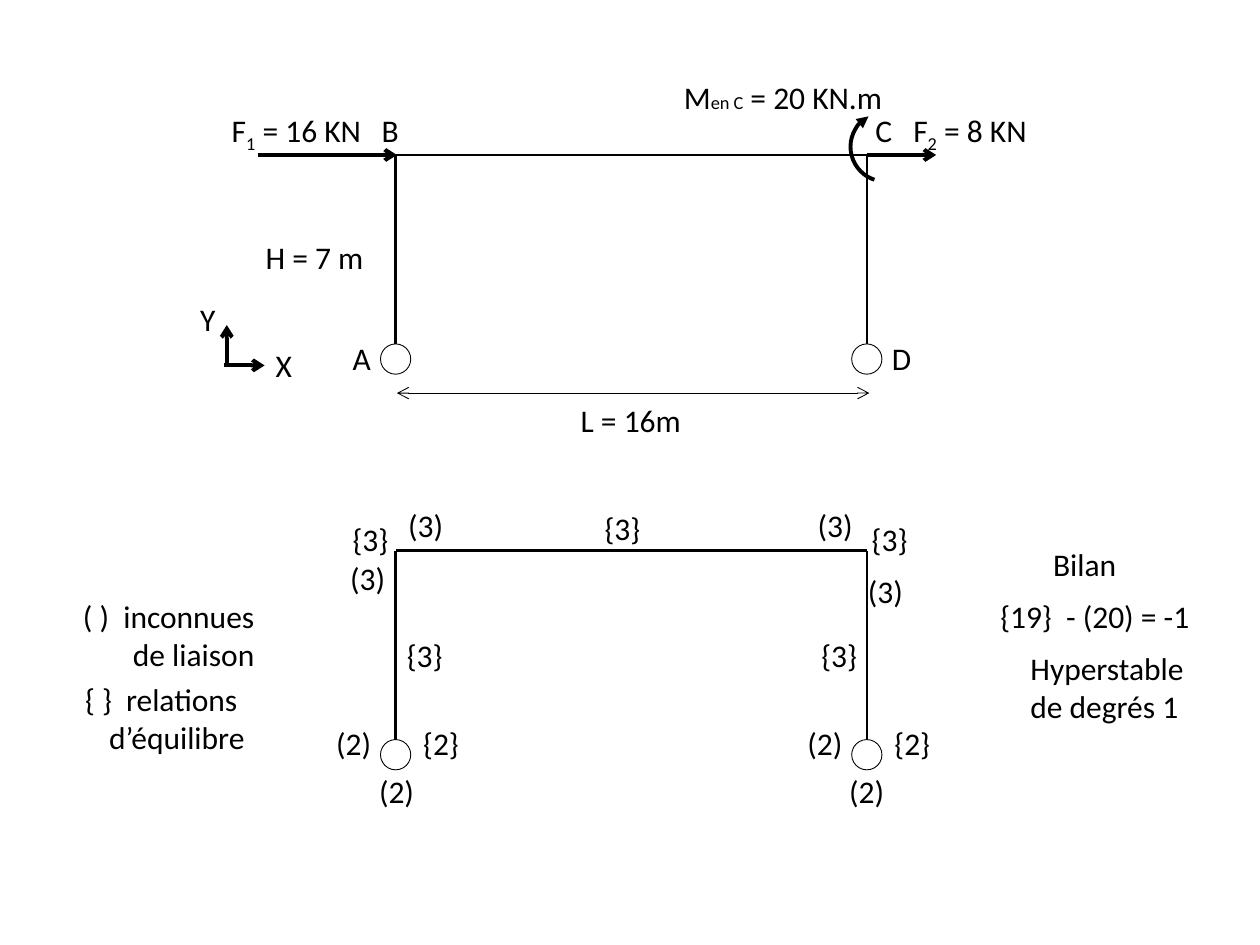
from dataclasses import dataclass
from typing import Any, Optional

import pptx
import pptx.dml.color
import pptx.enum.shapes
import pptx.enum.text
import pptx.oxml
import pptx.oxml.ns
import pptx.util

COLUMNS, ROWS = 100, 75
CELL = pptx.util.Inches(0.1)
COLORS = {"ink": "000000"}
FONT = "Calibri"
TEXT_SIZE = 18
THIN, FRAME, FORCE = 0.5, 1.5, 2.25

# Portal frame, in columns and rows
LEFT_POST, RIGHT_POST = 31.4, 68.8
POST_HEIGHT = 15
HINGE = 2.4
LOADED_BEAM, COUNTED_BEAM = 12.3, 43.7

ALIGN = pptx.enum.text.PP_ALIGN


@dataclass
class Run:
    text: str
    size: float = TEXT_SIZE
    subscript: bool = False


@dataclass
class Line:
    runs: list[Run]
    align: Optional[ALIGN] = None


@dataclass
class Label:
    left: float
    top: float
    width: float
    lines: list[Line]
    wrap: bool = False


@dataclass
class Segment:
    start: tuple[float, float]
    end: tuple[float, float]
    weight: float
    head: Optional[str] = None
    tail: Optional[str] = None


def plain(left: float, top: float, width: float, *texts: str,
          aligns: tuple = (), wrap: bool = False) -> Label:
    """Label whose lines each have a single run."""
    aligns = aligns or (None,) * len(texts)
    lines = [Line([Run(text)], align) for text, align in zip(texts, aligns)]
    return Label(left, top, width, lines, wrap)


def grid(cells: float) -> int:
    return round(cells * CELL)


def style_line(shape: Any, weight: float, head: Optional[str] = None,
               tail: Optional[str] = None) -> None:
    shape.line.color.rgb = pptx.dml.color.RGBColor.from_string(COLORS["ink"])
    shape.line.width = pptx.util.Pt(weight)
    outline = shape.line._get_or_add_ln()
    for tag, arrow in (("a:headEnd", head), ("a:tailEnd", tail)):
        if arrow:
            end = pptx.oxml.ns.qn(tag)
            outline.append(outline.makeelement(end, {"type": arrow}))


def draw_segment(shapes: Any, segment: Segment) -> None:
    connector = shapes.add_connector(
        pptx.enum.shapes.MSO_CONNECTOR.STRAIGHT,
        *map(grid, segment.start + segment.end))
    style_line(connector, segment.weight, segment.head, segment.tail)
    properties = connector._element.spPr
    properties.append(properties.makeelement(pptx.oxml.ns.qn("a:effectLst"), {}))


def draw_outline(shapes: Any, kind: Any, left: float, top: float, size: float,
                 weight: float, head: Optional[str] = None) -> Any:
    shape = shapes.add_shape(kind, *map(grid, (left, top, size, size)))
    shape.shadow.inherit = False
    shape.fill.background()
    style_line(shape, weight, head)
    return shape


def draw_label(shapes: Any, label: Label) -> None:
    height = 4 if len(label.lines) == 1 else 7.1
    box = shapes.add_textbox(*map(grid, (label.left, label.top, label.width, height)))
    frame = box.text_frame
    frame.word_wrap = label.wrap
    frame.auto_size = pptx.enum.text.MSO_AUTO_SIZE.SHAPE_TO_FIT_TEXT
    for index, line in enumerate(label.lines):
        paragraph = frame.add_paragraph() if index else frame.paragraphs[0]
        paragraph.alignment = line.align
        for part in line.runs:
            run = paragraph.add_run()
            run.text = part.text
            run.font.name = FONT
            run.font.size = pptx.util.Pt(part.size)
            run.font.color.rgb = pptx.dml.color.RGBColor.from_string(COLORS["ink"])
            if part.subscript:
                run.font._element.set("baseline", "-25000")


def draw_portal(shapes: Any, beam: float) -> None:
    """Two hinged posts joined by a beam at the given row."""
    group = shapes.add_group_shape().shapes
    foot = beam + POST_HEIGHT
    for post in (LEFT_POST, RIGHT_POST):
        draw_outline(group, pptx.enum.shapes.MSO_SHAPE.OVAL,
                     post - HINGE / 2, foot, HINGE, THIN)
        draw_segment(group, Segment((post, foot), (post, beam), FRAME))
    draw_segment(group, Segment((LEFT_POST, beam), (RIGHT_POST, beam), FRAME))


def draw_moment(shapes: Any) -> None:
    arc = draw_outline(shapes, pptx.enum.shapes.MSO_SHAPE.ARC,
                       67.5, 8.9, 5.5, FORCE, head="triangle")
    arc.adjustments[0], arc.adjustments[1] = 179.22, 43.18
    arc._element.spPr.xfrm.set("flipH", "1")


def draw_axes(shapes: Any) -> None:
    group = shapes.add_group_shape().shapes
    draw_segment(group, Segment((18, 29.1), (18, 25.8), FORCE, tail="arrow"))
    draw_segment(group, Segment((17.8, 29), (21, 29), FORCE, tail="arrow"))
    draw_label(group, plain(14.9, 23.3, 3.2, "Y"))
    draw_label(group, plain(20.9, 27, 3.3, "X"))


ARROWS = [
    Segment((20.5, LOADED_BEAM), (31.5, LOADED_BEAM), FORCE, tail="arrow"),
    Segment((RIGHT_POST, LOADED_BEAM), (74.3, LOADED_BEAM), FORCE, tail="arrow"),
    Segment((31.5, 31.2), (69, 31.2), THIN, head="arrow", tail="arrow"),
]

LOAD_LABELS = [
    Label(53.3, 5.7, 18, [Line([Run("M"), Run("en C", 10.5), Run(" = 20 KN.m")])]),
    Label(17.4, 8.3, 12.5, [Line([Run("F"), Run("1", subscript=True), Run(" = 16 KN")])]),
    Label(71.5, 8.3, 11.3, [Line([Run("F"), Run("2", subscript=True), Run(" = 8 KN")])]),
    plain(27, 26.4, 3.5, "A"),
    plain(29.3, 8.3, 3.4, "B"),
    plain(68.5, 8.3, 3.4, "C"),
    plain(69.8, 26.4, 3.6, "D"),
    plain(20.1, 18.4, 9.9, "H = 7 m"),
    plain(45.1, 31.3, 10.1, "L = 16m"),
]

# Left and top of every occurrence of each count
COUNTS = {
    "(3)": [(26.8, 43.9), (31.4, 39.7), (63.9, 39.7), (67.9, 44.9)],
    "{3}": [(27, 40.8), (31.3, 50), (47, 39.9), (64.2, 50), (68.2, 40.8)],
    "(2)": [(25.7, 57), (63.1, 57), (29.1, 60.8), (66.4, 60.8)],
    "{2}": [(32.6, 57), (70, 57)],
}
COUNT_WIDTHS = {"(": 4.8, "{": 4.9}

NOTES = [
    plain(5.6, 46.9, 15.8, "( )  inconnues", "de liaison", aligns=(None, ALIGN.RIGHT)),
    plain(5.6, 53.5, 14.8, "{ }  relations ", "d’équilibre",
          aligns=(ALIGN.RIGHT, ALIGN.RIGHT)),
    plain(82.6, 42.8, 7.1, "Bilan"),
    plain(78.4, 46.9, 17.5, "{19}  - (20) = -1", wrap=True),
    plain(80.8, 51, 14.3, "Hyperstable", "de degrés 1"),
]


def main() -> None:
    presentation = pptx.Presentation()
    presentation.slide_width = COLUMNS * CELL
    presentation.slide_height = ROWS * CELL
    slide = presentation.slides.add_slide(presentation.slide_layouts[6])
    shapes = slide.shapes

    for beam in (LOADED_BEAM, COUNTED_BEAM):
        draw_portal(shapes, beam)
    for arrow in ARROWS:
        draw_segment(shapes, arrow)
    draw_moment(shapes)
    draw_axes(shapes)

    counts = [plain(left, top, COUNT_WIDTHS[text[0]], text)
              for text, places in COUNTS.items() for left, top in places]
    for label in LOAD_LABELS + counts + NOTES:
        draw_label(shapes, label)
    presentation.save("out.pptx")


if __name__ == "__main__":
    main()
